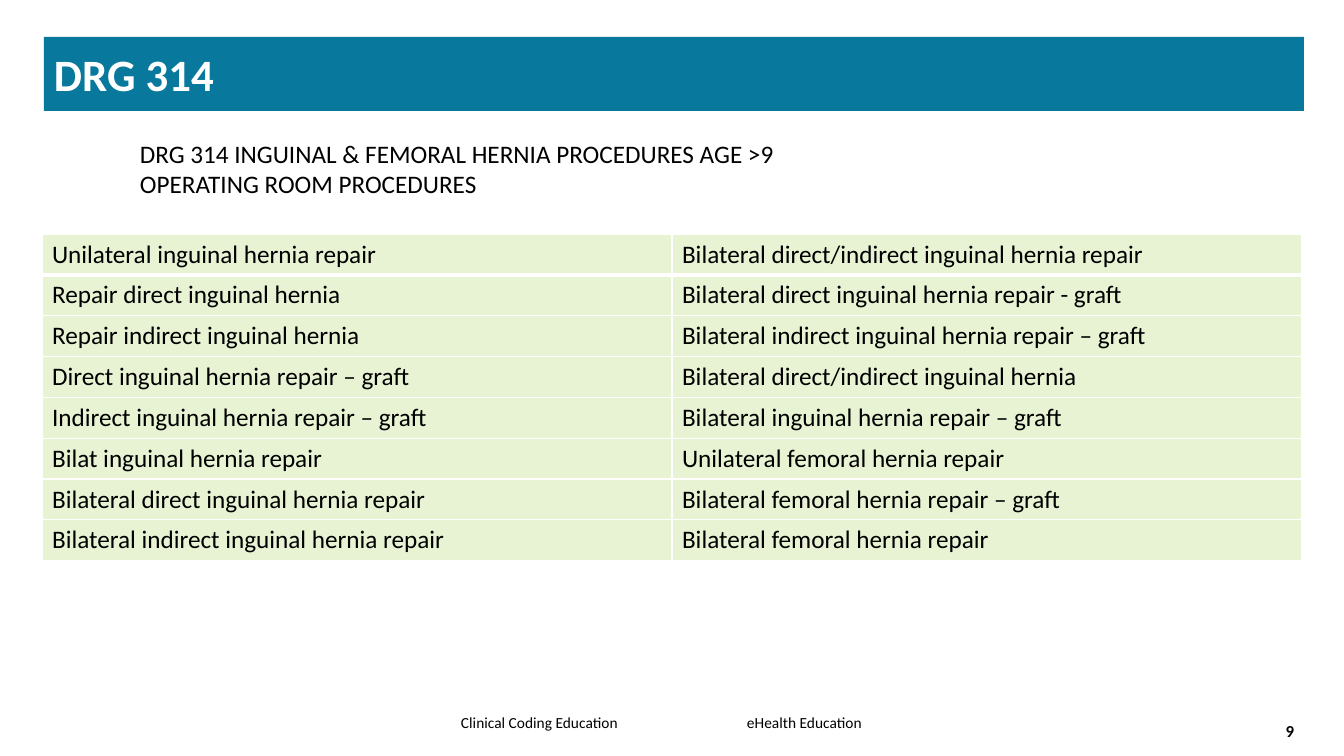
from lxml import etree
from pptx import Presentation
from pptx.dml.color import RGBColor
from pptx.enum.shapes import MSO_SHAPE
from pptx.enum.text import MSO_ANCHOR, PP_ALIGN
from pptx.oxml.ns import qn
from pptx.util import Emu, Pt

RECTANGLE = MSO_SHAPE.RECTANGLE
TOP, MIDDLE = MSO_ANCHOR.TOP, MSO_ANCHOR.MIDDLE
LEFT, RIGHT = PP_ALIGN.LEFT, PP_ALIGN.RIGHT

TITLE = "DRG 314"
SUBTITLE = [
    "DRG 314 INGUINAL & FEMORAL HERNIA PROCEDURES AGE >9",
    "OPERATING ROOM PROCEDURES",
]
PROCEDURES = [
    ("Unilateral inguinal hernia repair", "Bilateral direct/indirect inguinal hernia repair"),
    ("Repair direct inguinal hernia", "Bilateral direct inguinal hernia repair - graft"),
    ("Repair indirect inguinal hernia", "Bilateral indirect inguinal hernia repair – graft"),
    ("Direct inguinal hernia repair – graft", "Bilateral direct/indirect inguinal hernia"),
    ("Indirect inguinal hernia repair – graft", "Bilateral inguinal hernia repair – graft"),
    ("Bilat inguinal hernia repair", "Unilateral femoral hernia repair"),
    ("Bilateral direct inguinal hernia repair", "Bilateral femoral hernia repair – graft"),
    ("Bilateral indirect inguinal hernia repair", "Bilateral femoral hernia repair"),
]
FOOTER = "Clinical Coding Education\teHealth Education"
SLIDE_NUMBER = "9"

THEME = {
    "font": "Calibri",
    "banner": RGBColor.from_string("08799C"),
    "cell": RGBColor.from_string("E8F3D4"),
    "border": "FFFFFF",
    "title": {"size": Pt(32), "bold": True, "color": RGBColor.from_string("FFFFFF")},
    "body": {"size": Pt(18), "bold": False, "color": RGBColor.from_string("000000")},
    "footer": {"size": Pt(11), "bold": False, "color": RGBColor.from_string("000000")},
    "number": {"size": Pt(12), "bold": True, "color": RGBColor.from_string("000000")},
}

SLIDE_SIZE = (1344, 756)
BANNER_BOX = (44, 37, 1260, 74)
SUBTITLE_BOX = (77, 133, 1191, 101)
TABLE_BOX = (42, 234, 1260, 327)
FOOTER_BOX = (424, 696, 508, 52)
NUMBER_BOX = (1159, 714, 145, 33)
SUBTITLE_INDENT = 53
FOOTER_INSET = 37
FOOTER_TAB = 286
THIN, THICK = Pt(1), Pt(3)


def px(length):
    return Emu(round(length * 914400 / 100.8))


def place(box):
    return [px(length) for length in box]


def format_paragraph(paragraph, style, alignment=LEFT):
    paragraph.alignment = alignment
    values = dict(THEME[style], name=THEME["font"])
    paragraph.font.color.rgb = values.pop("color")
    for name, value in values.items():
        setattr(paragraph.font, name, value)


def write(frame, lines, style, anchor=TOP, alignment=LEFT, indent=0, tab=0):
    frame.word_wrap = True
    frame.vertical_anchor = anchor
    frame.text = "\n".join(lines)
    for paragraph in frame.paragraphs:
        properties = paragraph._p.get_or_add_pPr()
        if indent:
            properties.set("marL", str(px(indent)))
            properties.set("indent", "0")
        if tab:
            tabs = etree.SubElement(properties, qn("a:tabLst"))
            etree.SubElement(tabs, qn("a:tab"), pos=str(px(tab)), algn="l")
        format_paragraph(paragraph, style, alignment)


def add_text(slide, box, *args, **options):
    shape = slide.shapes.add_textbox(*place(box))
    write(shape.text_frame, *args, **options)
    return shape


def set_borders(cell, widths):
    """Draw the cell edges; the edges must come before the fill in the XML."""
    properties = cell._tc.get_or_add_tcPr()
    for position, (edge, width) in enumerate(widths.items()):
        line = etree.Element(qn(f"a:ln{edge}"), w=str(width))
        fill = etree.SubElement(line, qn("a:solidFill"))
        etree.SubElement(fill, qn("a:srgbClr"), val=THEME["border"])
        properties.insert(position, line)


def add_banner(slide):
    banner = slide.shapes.add_shape(RECTANGLE, *place(BANNER_BOX))
    banner.shadow.inherit = False
    banner.fill.solid()
    banner.fill.fore_color.rgb = THEME["banner"]
    banner.line.fill.background()
    write(banner.text_frame, [TITLE], "title", MIDDLE)


def add_procedures(slide):
    row_count, column_count = len(PROCEDURES), len(PROCEDURES[0])
    table = slide.shapes.add_table(row_count, column_count, *place(TABLE_BOX)).table
    table.first_row = table.horz_banding = False
    for row_index, procedures in enumerate(PROCEDURES):
        bottom = THICK if row_index == 0 else THIN
        for column_index, procedure in enumerate(procedures):
            cell = table.cell(row_index, column_index)
            cell.text = procedure
            format_paragraph(cell.text_frame.paragraphs[0], "body")
            cell.fill.solid()
            cell.fill.fore_color.rgb = THEME["cell"]
            set_borders(cell, {"L": THIN, "R": THIN, "T": THIN, "B": bottom})


def main():
    presentation = Presentation()
    presentation.slide_width, presentation.slide_height = place(SLIDE_SIZE)
    slide = presentation.slides.add_slide(presentation.slide_layouts[6])
    footer = add_text(slide, FOOTER_BOX, [FOOTER], "footer", MIDDLE, tab=FOOTER_TAB)
    footer.text_frame.margin_left = px(FOOTER_INSET)
    add_banner(slide)
    add_procedures(slide)
    add_text(slide, NUMBER_BOX, [SLIDE_NUMBER], "number", MIDDLE, RIGHT)
    add_text(slide, SUBTITLE_BOX, SUBTITLE, "body", indent=SUBTITLE_INDENT)
    presentation.save("out.pptx")


if __name__ == "__main__":
    main()
